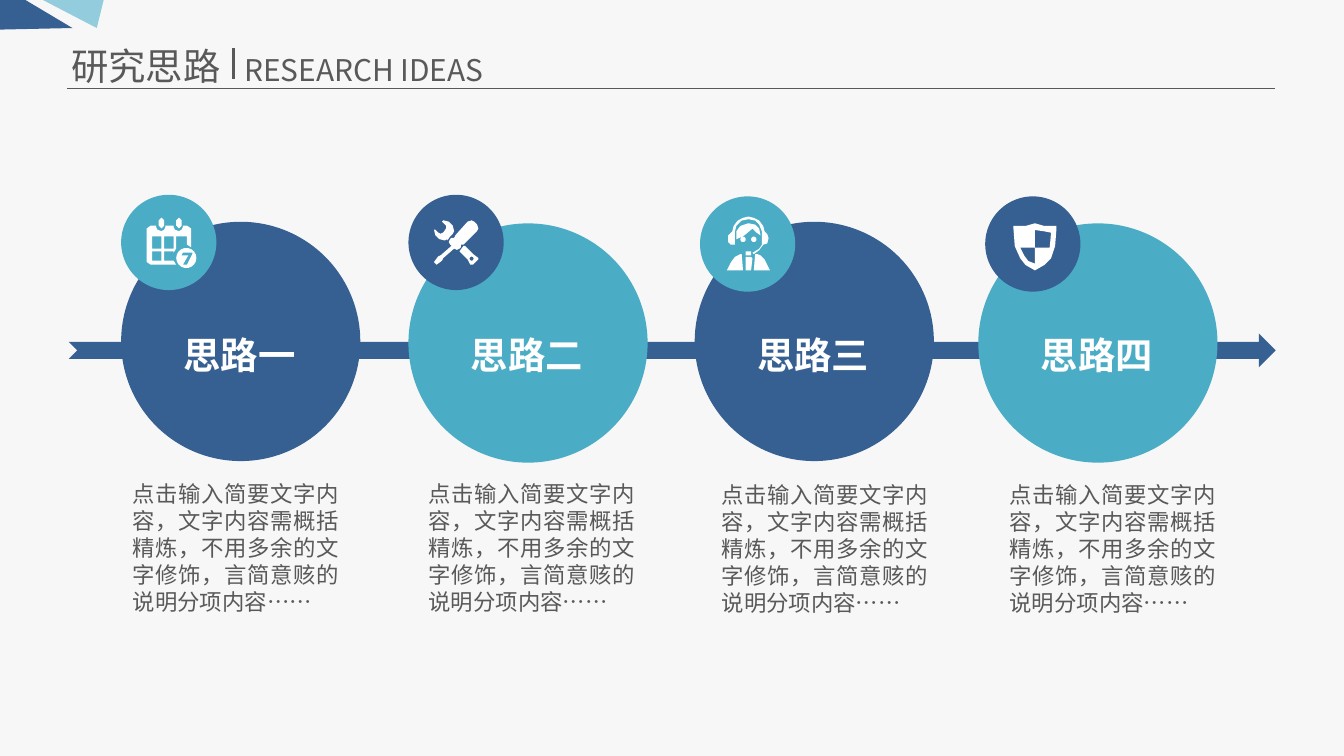
from math import cos, radians, sin

from lxml import etree
from pptx import Presentation
from pptx.dml.color import RGBColor
from pptx.enum.shapes import MSO_CONNECTOR, MSO_SHAPE
from pptx.enum.text import MSO_ANCHOR, PP_ALIGN
from pptx.oxml.ns import qn
from pptx.util import Cm, Pt

OVAL = MSO_SHAPE.OVAL
ARROW = MSO_SHAPE.NOTCHED_RIGHT_ARROW
STRAIGHT = MSO_CONNECTOR.STRAIGHT
TOP = MSO_ANCHOR.TOP
LEFT, CENTER, JUSTIFY = PP_ALIGN.LEFT, PP_ALIGN.CENTER, PP_ALIGN.JUSTIFY

FONT = "Noto Sans CJK SC"
COLORS = {"paper": "F7F7F7", "gray": "595959", "blue": "376092",
          "teal": "4BACC6", "pale": "93CDDD", "white": "FFFFFF"}
ICON_UNIT = 0.0254  # cm per icon grid step
CIRCLE, BADGE = 4.52, 1.8
DETAIL = "点击输入简要文字内容，文字内容需概括精炼，不用多余的文字修饰，言简意赅的说明分项内容……"


def color(name):
    return RGBColor.from_string(COLORS[name])


def paint(shape, fill):
    shape.shadow.inherit = False
    shape.fill.solid()
    shape.fill.fore_color.rgb = color(fill)
    shape.line.fill.background()


def add_preset(page, kind, left, top, width, height, fill):
    shape = page.shapes.add_shape(kind, Cm(left), Cm(top), Cm(width), Cm(height))
    paint(shape, fill)


def add_outline(page, contours, fill, left=0, top=0, unit=1):
    """Draw one freeform; inner contours cut holes."""
    def place(point):
        return Cm(left + point[0] * unit), Cm(top + point[1] * unit)

    builder = None
    for contour in contours:
        start, *rest = [place(point) for point in contour]
        if builder is None:
            builder = page.shapes.build_freeform(*start)
        else:
            builder.move_to(*start)
        builder.add_line_segments(rest, close=True)
    paint(builder.convert_to_shape(), fill)


def add_line(page, x1, y1, x2, y2, width):
    line = page.shapes.add_connector(STRAIGHT, Cm(x1), Cm(y1), Cm(x2), Cm(y2))
    line.line.color.rgb = color("gray")
    line.line.width = Pt(width)
    etree.SubElement(line._element.spPr, qn("a:effectLst"))


def write(box, text, size, ink="gray", align=LEFT, bold=False,
          wrap=False, spacing=1.27):
    frame = box.text_frame
    frame.text = text
    frame.word_wrap = wrap
    frame.vertical_anchor = TOP
    para = frame.paragraphs[0]
    para.alignment = align
    para.line_spacing = Pt(size * spacing)
    para.space_before = Pt(0)
    span = para.runs[0]
    span.font.size = Pt(size)
    span.font.bold = bold
    span.font.color.rgb = color(ink)
    span.font.name = FONT
    east_asian = etree.SubElement(span._r.get_or_add_rPr(), qn("a:ea"))
    east_asian.set("typeface", FONT)


def add_text(page, left, top, width, height, text, size, **style):
    box = page.shapes.add_textbox(Cm(left), Cm(top), Cm(width), Cm(height))
    write(box, text, size, **style)
    return box


def rect(x1, y1, x2, y2):
    return [(x1, y1), (x2, y1), (x2, y2), (x1, y2)]


def disc(x, y, radius):
    angles = [radians(step * 20) for step in range(18)]
    return [(x + radius * cos(a), y + radius * sin(a)) for a in angles]


def binder_ring(x):
    return [(x - 2, 19), (x, 17), (x + 2, 19), (x + 2, 23), (x, 25), (x - 2, 23)]


# Icon contours on a 71-step grid that spans the badge
CALENDAR = [
    [(22, 23), (26, 23), (26, 24), (27, 26), (30, 27), (32, 26), (33, 24),
     (33, 23), (39, 23), (39, 24), (40, 26), (43, 27), (45, 26), (46, 24),
     (46, 23), (49, 23), (52, 25), (52, 39), (49, 37), (49, 31), (41, 31),
     (41, 40), (39, 43), (39, 42), (32, 42), (32, 49), (39, 49), (41, 52),
     (22, 52), (19, 50), (19, 25)],
    rect(23, 31, 30, 40), rect(32, 31, 39, 40), rect(23, 42, 30, 49),
    binder_ring(30), binder_ring(43), disc(48.5, 47, 7.5),
    [(46, 43), (53, 43), (53, 44), (49, 52), (46, 52), (50, 45), (45, 45)],
]
TOOLS = [
    [(41, 38), (38, 42), (44, 48), (46, 52), (48, 52), (52, 48), (52, 47),
     (48, 44), (42, 38)],
    disc(47, 47.5, 1.5),
    [(31, 31), (33, 29), (34, 27), (33, 23), (30, 20), (26, 19), (25, 20),
     (28, 23), (28, 25), (26, 28), (24, 29), (22, 28), (20, 26), (19, 26),
     (20, 30), (23, 33), (27, 34), (29, 33), (29, 34)],
    [(51, 22), (49, 20), (47, 19), (44, 20), (35, 30), (34, 32), (32, 32),
     (31, 33), (30, 35), (31, 37), (32, 38), (24, 45), (22, 46), (19, 50),
     (21, 52), (25, 49), (26, 47), (34, 40), (36, 41), (38, 40), (39, 39),
     (39, 37), (41, 37), (51, 27), (52, 25)],
]
ADVISER = [
    [(24, 26), (25, 22), (28, 18), (32, 16), (36, 15), (40, 16), (44, 18),
     (47, 22), (48, 26), (50, 28), (51, 31), (50, 35), (47, 36), (44, 40),
     (40, 43), (39, 42), (44, 39), (46, 36), (46, 26), (44, 21), (41, 18),
     (36, 17), (31, 18), (27, 22), (26, 26), (26, 36), (23, 36), (21, 34),
     (21, 29)],
    [(36, 20), (30, 22), (27, 26), (27, 32), (33, 29), (39, 24), (42, 27),
     (45, 29), (44, 24), (41, 21)],
    disc(32, 32, 2), disc(40, 32, 2), rect(34, 41, 38, 44),
    [(43, 43), (41, 43), (40, 55), (52, 55), (48, 47), (45, 44)],
    [(30, 43), (26, 45), (23, 49), (20, 55), (32, 55), (31, 43)],
    [(34, 45), (38, 45), (39, 46), (38, 55), (34, 55), (34, 46)],
]
SHIELD = [
    [(21, 22), (30, 22), (37, 20), (44, 22), (53, 22), (53, 24), (52, 37),
     (49, 46), (44, 51), (37, 55), (30, 51), (26, 46), (22, 37), (21, 24)],
    [(37, 38), (48, 38), (49, 27), (44, 26), (37, 25)],
    [(37, 50), (37, 38), (26, 38), (29, 44), (32, 48)],
]

# Label, icon, circle left and top, badge left and top, detail left and top
STEPS = [
    ("思路一", CALENDAR, (2.29, 4.19), (2.29, 3.68), (2.51, 9.06)),
    ("思路二", TOOLS, (7.72, 4.22), (7.72, 3.68), (8.1, 9.06)),
    ("思路三", ADVISER, (13.13, 4.19), (13.23, 3.71), (13.64, 9.08)),
    ("思路四", SHIELD, (18.49, 4.22), (18.62, 3.71), (19.08, 9.08)),
]


def add_header(page):
    add_line(page, 1.27, 1.67, 24.1, 1.67, 0.75)
    add_outline(page, [[(0.81, 0), (1.83, 0.53), (1.96, 0)]], "pale")
    add_outline(page, [[(1.37, 0.53), (0.48, 0), (0, 0), (0, 0.56)]], "blue")
    title = page.shapes.title
    title.left, title.top = Cm(1.09), Cm(0.64)
    title.width, title.height = Cm(3.35), Cm(1.12)
    write(title, "研究思路", 20)
    add_text(page, 4.37, 0.81, 5.26, 0.94, "RESEARCH IDEAS", 16)
    add_line(page, 4.42, 0.91, 4.42, 1.5, 1.5)


def add_step(page, step, circle_fill, badge_fill):
    label, icon, circle, badge, detail = step
    add_preset(page, OVAL, *circle, CIRCLE, CIRCLE, circle_fill)
    add_text(page, circle[0] + 0.92, 6.1, 2.64, 1.12, label, 20,
             ink="white", align=CENTER, bold=True)
    add_preset(page, OVAL, *badge, BADGE, BADGE, badge_fill)
    add_outline(page, icon, "white", *badge, ICON_UNIT)
    box = add_text(page, *detail, 3.91, 2.57, DETAIL, 12,
                   align=JUSTIFY, wrap=True, spacing=1.21)
    frame = box.text_frame
    frame.margin_left = frame.margin_right = 0
    frame.margin_top = frame.margin_bottom = 0


def main():
    deck = Presentation()
    deck.slide_width, deck.slide_height = Cm(25.4), Cm(14.28)
    page = deck.slides.add_slide(deck.slide_layouts[5])
    page.background.fill.solid()
    page.background.fill.fore_color.rgb = color("paper")
    add_header(page)
    # Timeline with four steps in alternating colours
    add_preset(page, ARROW, 1.3, 6.3, 22.81, 0.64, "blue")
    for index, step in enumerate(STEPS):
        fills = ("teal", "blue") if index % 2 else ("blue", "teal")
        add_step(page, step, *fills)
    deck.save("out.pptx")


if __name__ == "__main__":
    main()
